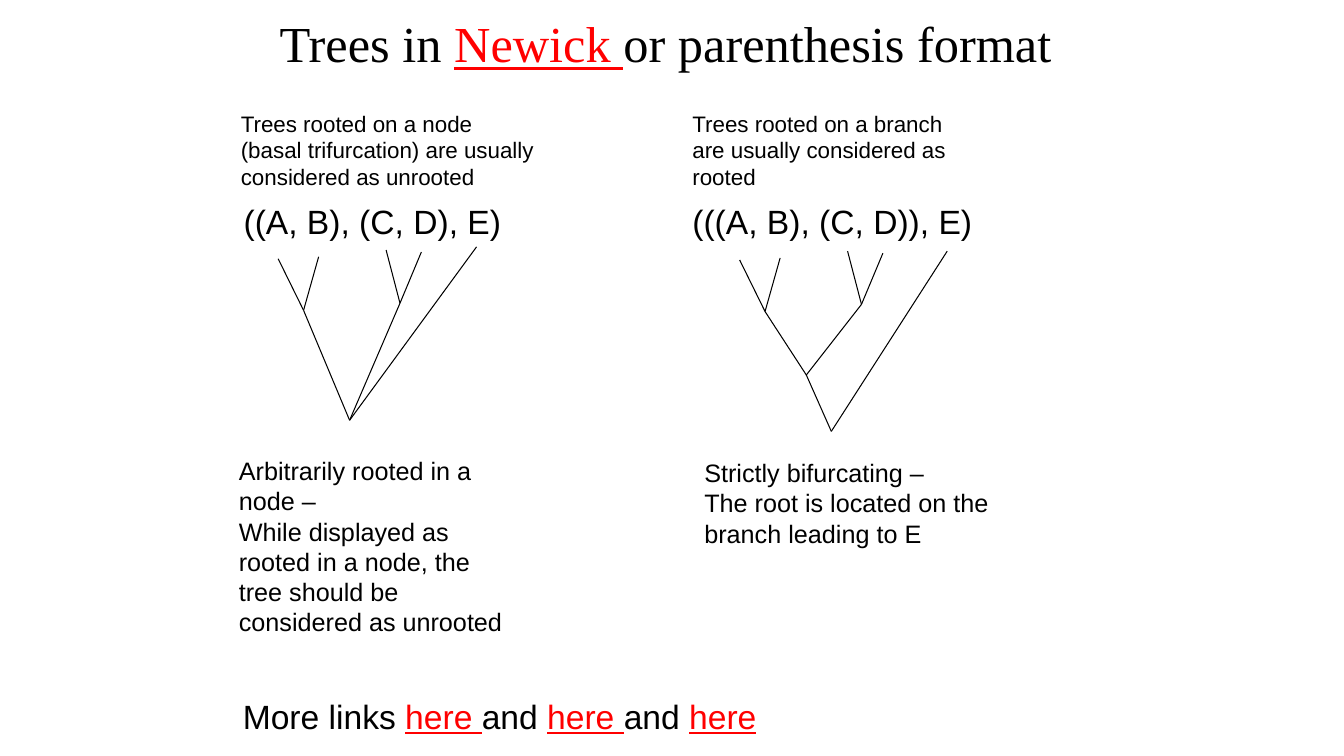
from lxml import etree
from pptx import Presentation
from pptx.dml.color import RGBColor
from pptx.enum.shapes import MSO_CONNECTOR
from pptx.enum.text import MSO_ANCHOR, PP_ALIGN
from pptx.oxml.ns import qn
from pptx.util import Cm, Pt

BLACK = RGBColor(0, 0, 0)
RED = RGBColor(255, 0, 0)
STRAIGHT = MSO_CONNECTOR.STRAIGHT
LEFT, CENTER = PP_ALIGN.LEFT, PP_ALIGN.CENTER
TOP, MIDDLE = MSO_ANCHOR.TOP, MSO_ANCHOR.MIDDLE

# Points are in cm from the top left corner of each tree.
CLADES = {"A": (0, 0.3), "B": (1.02, 0.25), "C": (2.72, 0.08),
          "D": (3.61, 0.13), "AB": (0.64, 1.6), "CD": (3.07, 1.42)}
CHERRIES = [("A", "AB"), ("B", "AB"), ("C", "CD"), ("D", "CD")]

UNROOTED = {
    "note": "Trees rooted on a node (basal trifurcation) are usually "
            "considered as unrooted",
    "newick": "((A, B), (C, D), E)",
    "caption": "Arbitrarily rooted in a node –\nWhile displayed as rooted in "
               "a node, the tree should be considered as unrooted",
    "nodes": CLADES | {"E": (5, 0), "root": (1.8, 4.37)},
    "branches": CHERRIES + [("AB", "root"), ("CD", "root"), ("E", "root")],
    "note_box": (0, 0, 8, 2.31),
    "newick_box": (0.07, 2.29, 7.06, 1.27),
    "tree_at": (1.19, 3.58),
    "caption_box": (-0.05, 8.71, 7.39, 4.88),
}
ROOTED = {
    "note": "Trees rooted on a branch are usually considered as rooted",
    "newick": "(((A, B), (C, D)), E)",
    "caption": "Strictly bifurcating – \n"
               "The root is located on the branch leading to E",
    "nodes": CLADES | {"E": (5.23, 0.08), "ABCD": (1.68, 3.2),
                       "root": (2.31, 4.62)},
    "branches": CHERRIES + [("AB", "ABCD"), ("CD", "ABCD"),
                            ("ABCD", "root"), ("E", "root")],
    "note_box": (0, 0, 7.52, 2.31),
    "newick_box": (0, 2.31, 7.62, 1.3),
    "tree_at": (1.44, 3.61),
    "caption_box": (0.3, 8.76, 9.25, 2.56),
}


def add_text(slide, box, text, size, font="Arial", align=LEFT,
             anchor=TOP, wrap=True):
    """Write one paragraph per line; words between asterisks look like links."""
    frame = slide.shapes.add_textbox(*(Cm(length) for length in box)).text_frame
    frame.word_wrap = wrap
    frame.vertical_anchor = anchor
    for index, line in enumerate(text.split("\n")):
        para = frame.add_paragraph() if index else frame.paragraphs[0]
        para.alignment = align
        for position, words in enumerate(line.split("*")):
            if not words:
                continue
            is_link = position % 2 == 1
            span = para.add_run()
            span.text = words
            span.font.name = font
            span.font.size = Pt(size)
            span.font.color.rgb = RED if is_link else BLACK
            span.font.underline = is_link


def add_branch(slide, start, end):
    branch = slide.shapes.add_connector(
        STRAIGHT, *(Cm(length) for length in (*start, *end)))
    branch.line.color.rgb = BLACK
    branch.line.width = Pt(0.75)
    etree.SubElement(branch.element.spPr, qn("a:effectLst"))


def add_tree(slide, left, top, nodes, branches):
    points = {name: (left + x, top + y) for name, (x, y) in nodes.items()}
    for child, parent in branches:
        add_branch(slide, points[child], points[parent])


def add_tree_column(slide, left, top, column):
    """Place note, Newick string, tree and caption below one another."""
    def place(box):
        return left + box[0], top + box[1], *box[2:]

    add_text(slide, place(column["note_box"]), column["note"], 16)
    add_text(slide, place(column["newick_box"]), column["newick"], 24, wrap=False)
    add_tree(slide, *place(column["tree_at"]), column["nodes"], column["branches"])
    add_text(slide, place(column["caption_box"]), column["caption"], 18)


def add_title(slide, box):
    add_text(slide, box, "Trees in *Newick *or parenthesis format ", 36,
             font="Times New Roman", align=CENTER, anchor=MIDDLE)


def add_links(slide, box):
    add_text(slide, box, "More links *here *and *here *and *here*", 24, wrap=False)


def main():
    deck = Presentation()
    deck.slide_width, deck.slide_height = Cm(33.87), Cm(19.05)
    slide = deck.slides.add_slide(deck.slide_layouts[6])
    add_title(slide, (5.44, 0.28, 22.99, 1.6))
    add_tree_column(slide, 5.82, 2.64, UNROOTED)
    add_tree_column(slide, 17.2, 2.64, ROOTED)
    add_links(slide, (5.87, 17.4, 13.59, 1.3))
    deck.save("out.pptx")


if __name__ == "__main__":
    main()
